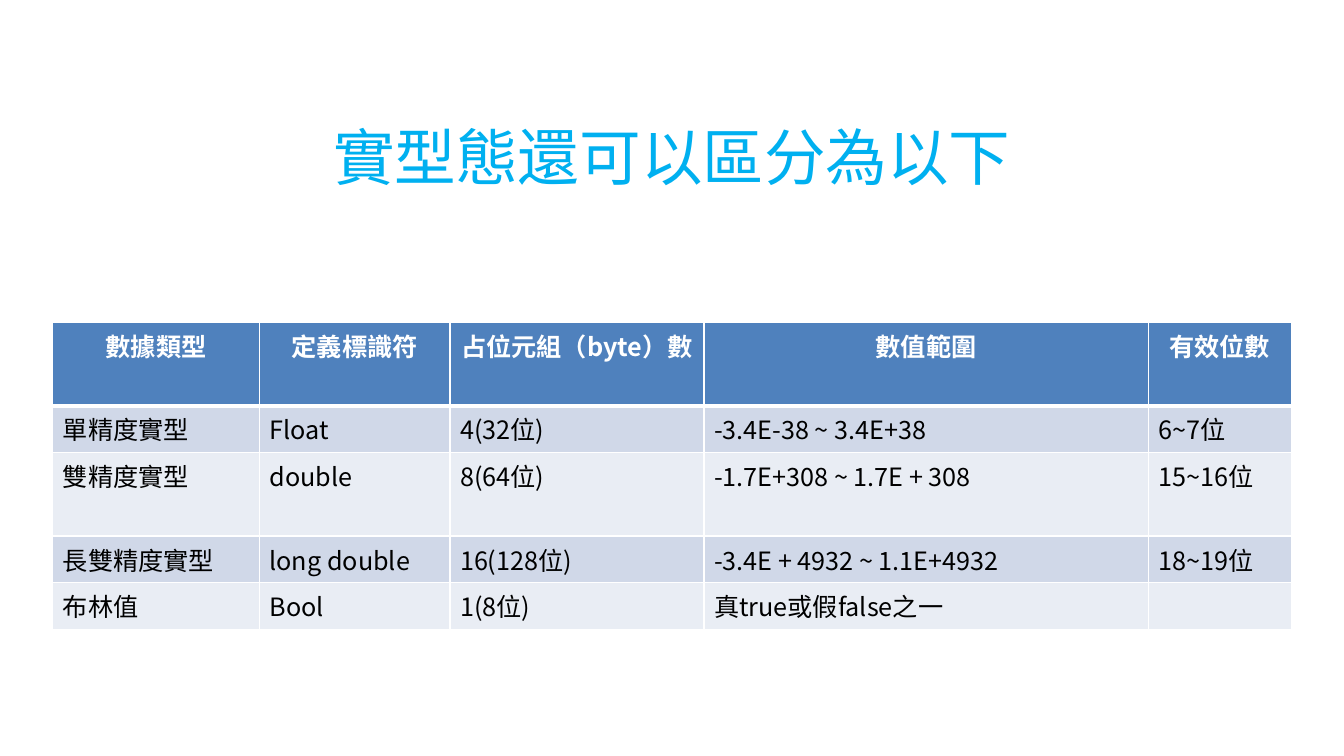
from lxml import etree
from pptx import Presentation
from pptx.dml.color import RGBColor
from pptx.enum import text
from pptx.oxml import ns
from pptx.util import Cm, Pt

# Content
TITLE = "實型態還可以區分為以下"
ROWS = [
    ("數據類型", "定義標識符", "占位元組（byte）數", "數值範圍", "有效位數"),
    ("單精度實型", "Float", "4(32位)", "-3.4E-38 ~ 3.4E+38", "6~7位"),
    ("雙精度實型", "double", "8(64位)", "-1.7E+308 ~ 1.7E + 308", "15~16位"),
    ("長雙精度實型", "long double", "16(128位)", "-3.4E + 4932 ~ 1.1E+4932", "18~19位"),
    ("布林值", "Bool", "1(8位)", "真true或假false之一", ""),
]
WIDTHS = [5.21, 4.8, 6.4, 11.2, 3.6]
HEIGHTS = [2.08, 1.17, 2.11, 1.17, 1.17]
FACE = "Noto Sans CJK TC"

# Formats
HEAD = {"size": Pt(18), "bold": True, "name": FACE}
BODY = {"size": Pt(18), "bold": False, "name": FACE}
TOP = {"size": Pt(44), "name": FACE}
BANDS = ["E9EDF4", "D0D8E8"]


def color(code):
    return RGBColor.from_string(code)


def write(frame, words, form, ink, align):
    para = frame.paragraphs[0]
    para.alignment = align
    run = para.add_run()
    run.text = words
    for key, val in form.items():
        setattr(run.font, key, val)
    run.font.color.rgb = color(ink)
    etree.SubElement(run.font._element, ns.qn("a:ea"), typeface=FACE)


def edge(cell, side, points):
    line = etree.SubElement(cell._tc.get_or_add_tcPr(), ns.qn("a:ln" + side),
                            w=str(Pt(points)))
    fill = etree.SubElement(line, ns.qn("a:solidFill"))
    etree.SubElement(fill, ns.qn("a:srgbClr"), val="FFFFFF")


def main():
    deck = Presentation()
    deck.slide_width, deck.slide_height = Cm(33.87), Cm(19.05)
    slide = deck.slides.add_slide(deck.slide_layouts[5])

    # Title
    title = slide.shapes.title
    place = {"left": 1.7, "top": 2.34, "width": 30.48, "height": 3.18}
    for key, val in place.items():
        setattr(title, key, Cm(val))
    title.text_frame.vertical_anchor = text.MSO_ANCHOR.MIDDLE
    write(title.text_frame, TITLE, TOP, "00B0F0", text.PP_ALIGN.CENTER)

    # Table of types
    table = slide.shapes.add_table(
        len(ROWS), len(WIDTHS), Cm(1.33), Cm(8.13),
        Cm(sum(WIDTHS)), Cm(sum(HEIGHTS))).table
    for col, width in zip(table.columns, WIDTHS):
        col.width = Cm(width)
    for r, (row, height) in enumerate(zip(ROWS, HEIGHTS)):
        table.rows[r].height = Cm(height)
        head = r == 0
        for c, words in enumerate(row):
            cell = table.cell(r, c)
            for side in "LRTB":
                thick = (head and side == "B") or (r == 1 and side == "T")
                edge(cell, side, 3 if thick else 1)
            cell.fill.solid()
            cell.fill.fore_color.rgb = color("4F81BD" if head else BANDS[r % 2])
            if words:
                write(cell.text_frame, words, HEAD if head else BODY,
                      "FFFFFF" if head else "000000",
                      text.PP_ALIGN.CENTER if head else text.PP_ALIGN.LEFT)

    deck.save("out.pptx")


if __name__ == "__main__":
    main()
